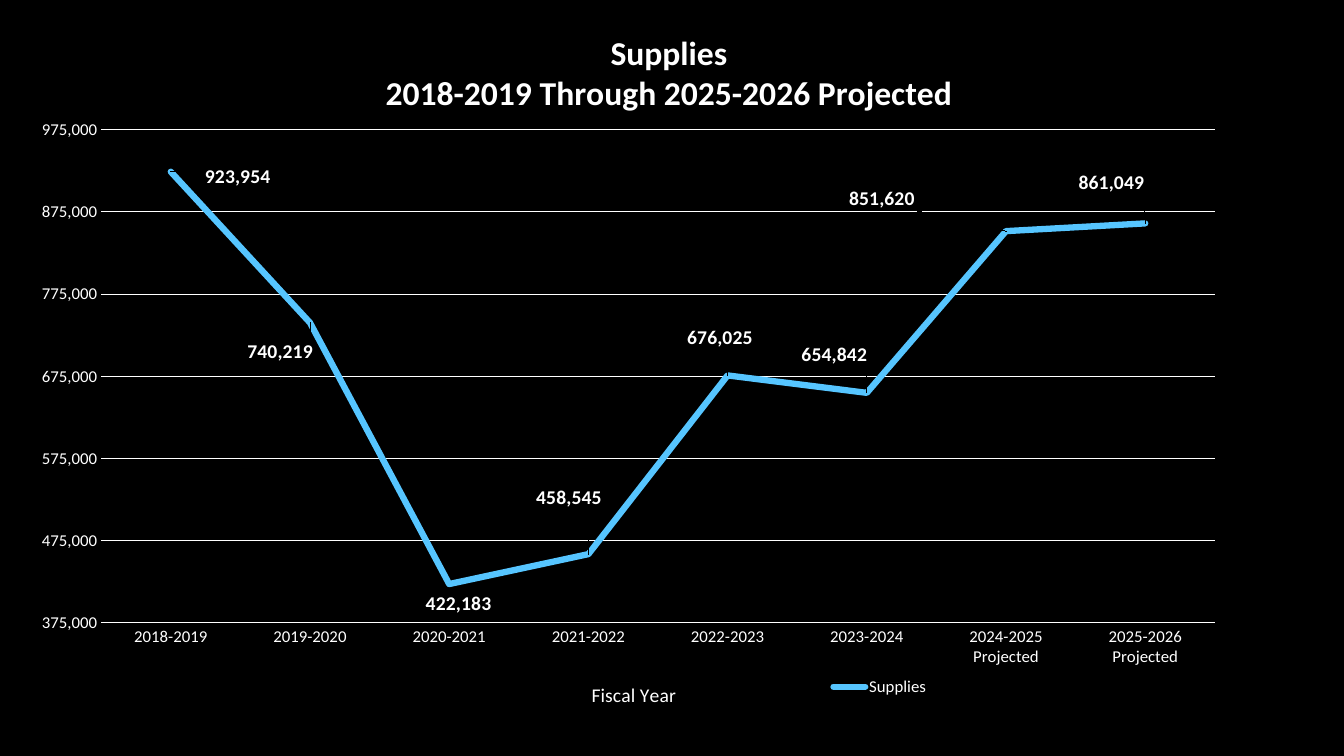
"""Build a slide with a line chart of supplies spending by fiscal year."""
from lxml import etree
from pptx import Presentation, util as u
from pptx.chart.data import CategoryChartData
from pptx.dml.color import RGBColor
from pptx.enum import chart as kinds
from pptx.oxml.ns import qn

COLORS = {"back": "000000", "text": "FFFFFF", "line": "56C5FF"}
FONT = "Calibri"
NUMBERS = "#,##0"
TITLE = ["Supplies", "2018-2019 Through 2025-2026 Projected"]
AXIS_TITLE = ["Fiscal Year"]
SERIES = "Supplies"
# Each row: fiscal year, amount, label shift as percent of chart width and height
YEARS = [
    ("2018-2019", 923954, 2.3, 0.7),
    ("2019-2020", 740219, -5.1, 4.2),
    ("2020-2021", 422183, -2.1, 2.8),
    ("2021-2022", 458545, -4.3, -8.1),
    ("2022-2023", 676025, -3.4, -5.4),
    ("2023-2024", 654842, -5.3, -5.4),
    ("2024-2025 Projected", 851620, -12.3, -4.7),
    ("2025-2026 Projected", 861049, -5.4, -5.8),
]
CHART_BOX = (0.16, 0.08, 12.98, 7)
PLOT_SHARE = {"x": 0.065, "y": 0.145, "w": 0.851, "h": 0.736}
TITLE_SHARE = {"x": 0.28, "y": 0.03}
AXIS_TITLE_SHARE = {"x": 0.437, "y": 0.96}
LEGEND_SHARE = {"x": 0.62, "y": 0.955, "w": 0.08, "h": 0.035}


def color(name):
    return RGBColor.from_string(COLORS[name])


def style(font, size, bold=False):
    font.name, font.size, font.bold = FONT, u.Pt(size), bold
    font.color.rgb = color("text")


def place(parent, index, shares, edge=True, inner=False):
    """Put a manual layout among the children of a chart element."""
    for old in parent.findall(qn("c:layout")):
        parent.remove(old)
    layout = etree.Element(qn("c:layout"))
    manual = etree.SubElement(layout, qn("c:manualLayout"))
    settings = {"layoutTarget": "inner"} if inner else {}
    if edge:
        settings.update(xMode="edge", yMode="edge")
    for tag, value in {**settings, **shares}.items():
        etree.SubElement(manual, qn(f"c:{tag}")).set("val", str(value))
    parent.insert(index, layout)


def write_title(title, lines, size, bold, shares):
    frame = title.text_frame
    frame.text = "\n".join(lines)
    for para in frame.paragraphs:
        style(para.font, size, bold)
    place(title._element, 1, shares)


def thin_line(line):
    line.color.rgb = color("text")
    line.width = u.Pt(0.75)


def format_axes(chart):
    for axis in (chart.category_axis, chart.value_axis):
        axis.major_tick_mark = axis.minor_tick_mark = kinds.XL_TICK_MARK.NONE
        style(axis.tick_labels.font, 12)
    years, amounts = chart.category_axis, chart.value_axis
    thin_line(years.format.line)
    write_title(years.axis_title, AXIS_TITLE, 14, False, AXIS_TITLE_SHARE)
    amounts.minimum_scale, amounts.maximum_scale = 375000, 1000000
    amounts.major_unit = 100000
    amounts.tick_labels.number_format = NUMBERS
    amounts.tick_labels.number_format_is_linked = False
    amounts.format.line.fill.background()
    amounts.has_major_gridlines = True
    thin_line(amounts.major_gridlines.format.line)


def format_series(series):
    series.smooth = False
    series.marker.style = kinds.XL_MARKER_STYLE.NONE
    line = series.format.line
    line.color.rgb, line.width = color("line"), u.Pt(4.5)
    stroke = series._element.find(qn("c:spPr")).find(qn("a:ln"))
    stroke.set("cap", "rnd")
    etree.SubElement(stroke, qn("a:round"))
    labels = series.data_labels
    labels.show_value = True
    labels.number_format, labels.number_format_is_linked = NUMBERS, False
    labels.position = kinds.XL_LABEL_POSITION.RIGHT
    style(labels.font, 14, True)
    for index in range(len(YEARS)):
        label = series.points[index].data_label
        style(label.font, 14, True)
        label.position = kinds.XL_LABEL_POSITION.RIGHT
    for element, (_, _, across, down) in zip(series._element.iter(qn("c:dLbl")), YEARS):
        shift = {"x": round(across / 100, 4), "y": round(down / 100, 4)}
        place(element, 1, shift, edge=False)


def main():
    deck = Presentation()
    deck.slide_width, deck.slide_height = u.Inches(13.33), u.Inches(7.5)
    page = deck.slides.add_slide(deck.slide_layouts[6])
    page.background.fill.solid()
    page.background.fill.fore_color.rgb = color("back")

    data = CategoryChartData(number_format=NUMBERS)
    data.categories = [year for year, *_ in YEARS]
    data.add_series(SERIES, [amount for _, amount, *_ in YEARS])
    chart = page.shapes.add_chart(
        kinds.XL_CHART_TYPE.LINE, *map(u.Inches, CHART_BOX), data).chart
    style(chart.font, 10)
    chart.has_title = True
    write_title(chart.chart_title, TITLE, 24, True, TITLE_SHARE)
    chart.has_legend = True
    chart.legend.position = kinds.XL_LEGEND_POSITION.BOTTOM
    chart.legend.include_in_layout = False
    style(chart.legend.font, 12)
    place(chart.legend._element, 1, LEGEND_SHARE)
    plot = chart.plots[0]
    plot.vary_by_categories = False
    place(plot._element.getparent(), 0, PLOT_SHARE, inner=True)
    format_axes(chart)
    format_series(plot.series[0])
    deck.save("out.pptx")


if __name__ == "__main__":
    main()
